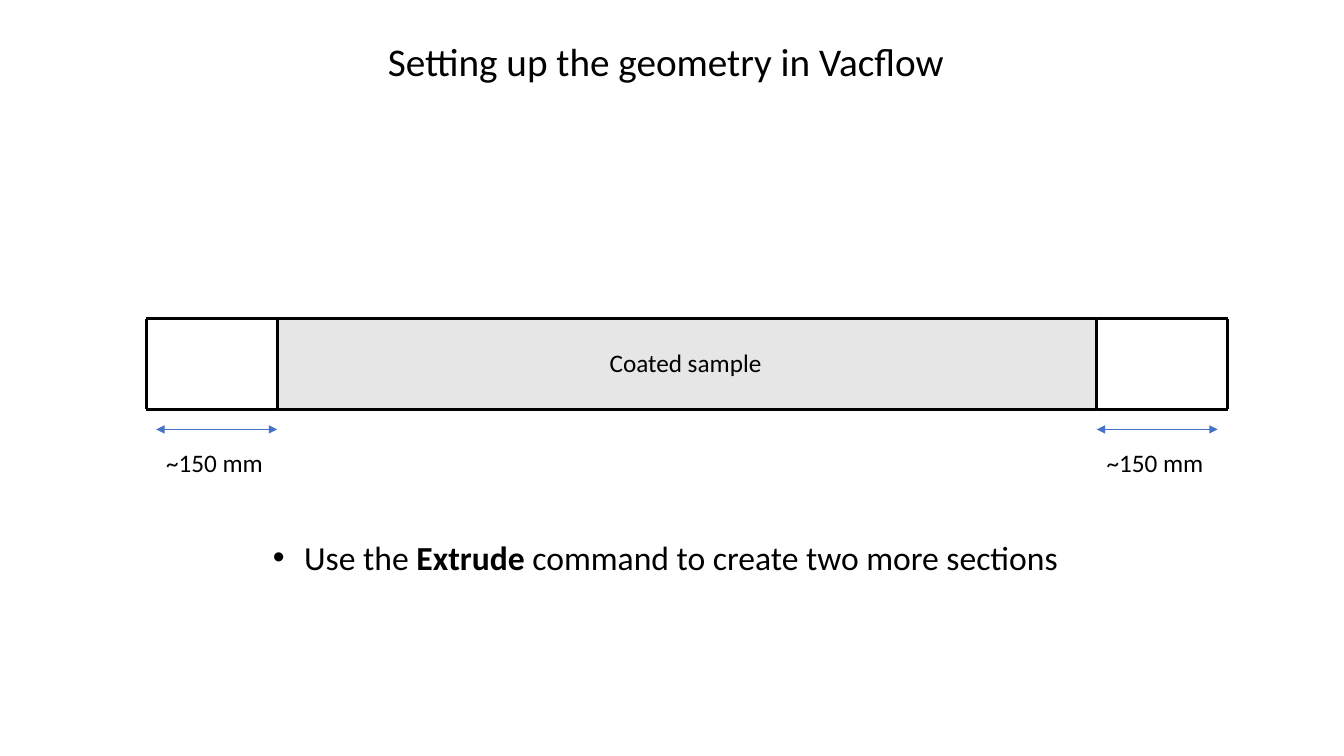
from pptx import Presentation
from pptx import util as u
from pptx.dml.color import RGBColor
from pptx.enum import shapes, text
from pptx.oxml.ns import qn
from lxml import etree

FONT = "Calibri"
BLACK, GREY, BLUE = "000000", "E7E6E6", "4472C4"


def color(value):
    return RGBColor.from_string(value)


def add_line(slide, start, end, line_color, width, arrows=False):
    points = [u.Inches(value) for value in (*start, *end)]
    line = slide.shapes.add_connector(shapes.MSO_CONNECTOR.STRAIGHT, *points)
    line.line.color.rgb = color(line_color)
    line.line.width = u.Pt(width)
    properties = line._element.spPr
    if arrows:
        outline = properties.find(qn("a:ln"))
        for end_name in ("a:headEnd", "a:tailEnd"):
            etree.SubElement(outline, qn(end_name), type="triangle")
    etree.SubElement(properties, qn("a:effectLst"))


def add_text(slide, box, runs, size):
    """Place one unwrapped line; runs are (wording, bold) pairs."""
    text_box = slide.shapes.add_textbox(*[u.Inches(value) for value in box])
    frame = text_box.text_frame
    frame.word_wrap = False
    frame.auto_size = text.MSO_AUTO_SIZE.SHAPE_TO_FIT_TEXT
    paragraph = frame.paragraphs[0]
    for wording, bold in runs:
        run = paragraph.add_run()
        run.text = wording
        run.font.name = FONT
        run.font.size = u.Pt(size)
        run.font.bold = bold
        run.font.color.rgb = color(BLACK)
    return paragraph


def add_title(slide, box):
    add_text(slide, box, [("Setting up the geometry in Vacflow", False)], 28)


def add_sample(slide, box):
    left, top, width, height = box
    sample = slide.shapes.add_shape(
        shapes.MSO_SHAPE.RECTANGLE, *[u.Inches(value) for value in box])
    sample.shadow.inherit = False
    sample.fill.solid()
    sample.fill.fore_color.rgb = color(GREY)
    sample.line.color.rgb = color(BLACK)
    sample.line.width = u.Pt(2.25)
    label_width = 1.73
    label_box = (left + (width - label_width) / 2, top + 0.24, label_width, 0.4)
    add_text(slide, label_box, [("Coated sample", False)], 18)


def add_section(slide, box, direction):
    """Open section growing from the sample: direction -1 left, 1 right."""
    left, top, width, height = box
    bottom = top + height
    inner, outer = (left, left + width) if direction > 0 else (left + width, left)
    for edge in (top, bottom):
        add_line(slide, (inner, edge), (outer, edge), BLACK, 2.25)
    add_line(slide, (outer, top), (outer, bottom), BLACK, 2.25)

    # Dimension arrow and its label
    arrow_length = 1.2
    arrow_left = min(inner, inner + direction * arrow_length)
    arrow_top = bottom + 0.2
    add_line(slide, (arrow_left, arrow_top),
             (arrow_left + arrow_length, arrow_top), BLUE, 0.5, arrows=True)
    add_text(slide, (arrow_left, bottom + 0.33, 1.17, 0.4),
             [("~150 mm", False)], 18)


def add_instruction(slide, box):
    paragraph = add_text(slide, box, [
        ("Use the ", False),
        ("Extrude", True),
        (" command to create two more sections", False),
    ], 24)
    indent = u.Inches(0.31)
    properties = paragraph._p.get_or_add_pPr()
    properties.set("marL", str(indent))
    properties.set("indent", str(-indent))
    etree.SubElement(properties, qn("a:buFont"), typeface="Arial")
    etree.SubElement(properties, qn("a:buChar"), char="•")


def main():
    presentation = Presentation()
    presentation.slide_width = u.Inches(13.333)
    presentation.slide_height = u.Inches(7.5)
    slide = presentation.slides.add_slide(presentation.slide_layouts[6])

    # Tube: coated sample between two extruded sections
    left, top, width, height = 2.75, 3.16, 8.13, 0.9
    section_width = 1.3
    add_sample(slide, (left, top, width, height))
    add_section(slide, (left - section_width, top, section_width, height), -1)
    add_section(slide, (left + width, top, section_width, height), 1)

    # Wording above and below the tube
    add_instruction(slide, (2.61, 5.28, 8.06, 0.5))
    add_title(slide, (3.75, 0.32, 5.87, 0.57))
    presentation.save("out.pptx")


if __name__ == "__main__":
    main()
